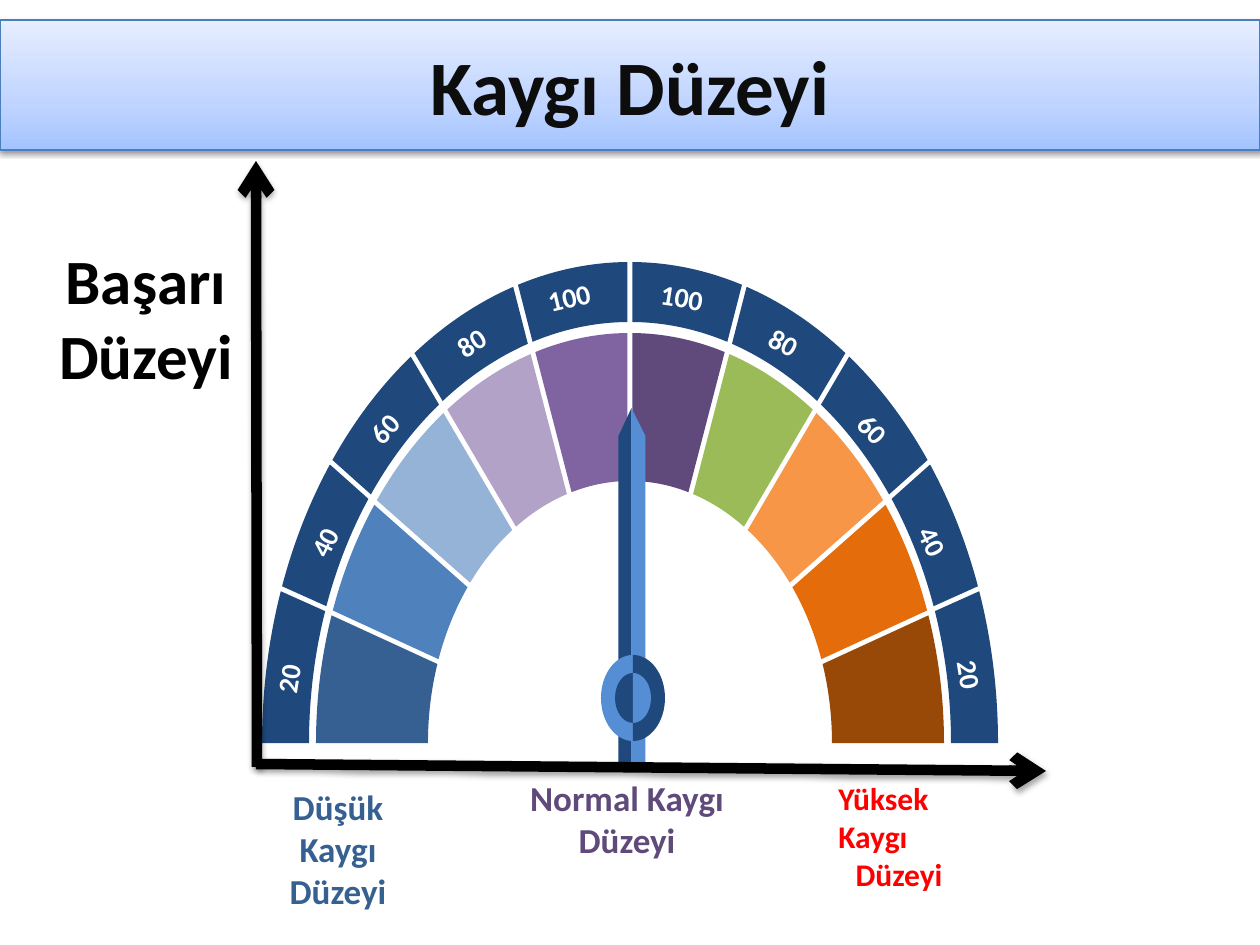
from copy import deepcopy
from itertools import chain
from math import cos, hypot, radians, sin, tan

from lxml import etree
from pptx import Presentation
from pptx.dml.color import RGBColor
from pptx.enum import shapes, text
from pptx.oxml import parse_xml
from pptx.oxml.ns import nsdecls, qn
from pptx.util import Pt

PX = 914400 / 126
FONT = "Calibri"

BLACK = RGBColor(0, 0, 0)
INK = RGBColor(0x0D, 0x0D, 0x0D)
WHITE = RGBColor(0xFF, 0xFF, 0xFF)
NAVY = RGBColor(0x1F, 0x49, 0x7D)
SKY = RGBColor(0x55, 0x8E, 0xD5)
STEEL = RGBColor(0x37, 0x60, 0x92)
PLUM = RGBColor(0x60, 0x4A, 0x7B)
RED = RGBColor(0xFF, 0, 0)
EDGE = RGBColor(0x4B, 0x7E, 0xBC)
BANNER_STOPS = [
    (0, RGBColor(0xA4, 0xC4, 0xFF)),
    (0.35, RGBColor(0xBF, 0xD4, 0xFF)),
    (1, RGBColor(0xE6, 0xEE, 0xFF)),
]
# Sectors from the right end of the dial to the left end
SECTOR_COLOURS = [
    RGBColor(0x98, 0x48, 0x07), RGBColor(0xE4, 0x6C, 0x0A),
    RGBColor(0xF7, 0x96, 0x46), RGBColor(0x9B, 0xBB, 0x59), PLUM,
    RGBColor(0x80, 0x64, 0xA2), RGBColor(0xB3, 0xA2, 0xC7),
    RGBColor(0x95, 0xB3, 0xD7), RGBColor(0x4F, 0x81, 0xBD), STEEL,
]

TITLE = "Kaygı Düzeyi"
# Text, centre x, centre y, rotation, from right to left
SCALE_LABELS = [
    ("20", 970, 675, 80.8), ("40", 933, 541, 63), ("60", 873, 429, 45.7),
    ("80", 784, 342, 28.5), ("100", 682, 297, 8.9), ("100", 569, 297, -13.4),
    ("80", 471, 342, -32.6), ("60", 384, 428, -47.9), ("40", 324, 542, -63.7),
    ("20", 288, 679, -80.9),
]
LEFT, CENTER = text.PP_ALIGN.LEFT, text.PP_ALIGN.CENTER
# Paragraphs with alignment, box, size, colour, wrap
CAPTIONS = [
    ([("Başarı", CENTER), ("Düzeyi", CENTER)], (45, 235, 202, 165), 36, BLACK, False),
    ([("Düşük Kaygı Düzeyi", CENTER)], (244, 779, 188, 140), 20, STEEL, True),
    ([("Normal Kaygı Düzeyi", CENTER)], (511, 770, 232, 97), 20, PLUM, True),
    ([("Yüksek Kaygı", LEFT), ("Düzeyi", CENTER)], (826, 773, 146, 127), 18, RED, True),
]
AXES = [(256, 764, 1046, 771), (257, 767, 256, 161)]

DIAL_CENTRE = (630, 743)
HALF_GAP = 2.5
# Outer and inner edge of each ring: radii, then cuts within a quarter turn
SCALE_RING = [((368, 481), (18.7, 35.7, 53.8, 71.9)),
              ((321, 421), (18.6, 35.8, 53.9, 71.9))]
SECTOR_RING = [((314, 410), (18.5, 35.9, 54, 72)),
               ((202, 262), (18.1, 37.1, 55, 72.5))]

POINTER_X, POINTER_TOP, POINTER_SHOULDER, POINTER_BOTTOM = 631.5, 408, 436, 766
POINTER_SIDES = [(14, SKY), (-13, NAVY)]
HUB_CENTRE = (633, 698)
# Radii, left colour, right colour
HUB_DISCS = [((32, 43), SKY, NAVY), ((18, 25), NAVY, SKY)]


def emu(*lengths):
    return [round(length * PX) for length in lengths]


def arc(centre, radii, start, end):
    """Four Bezier points of an elliptical arc; radians counted from the right."""
    (cx, cy), (rx, ry) = centre, radii
    k = 4 / 3 * tan((end - start) / 4)
    units = [(cos(start), sin(start)),
             (cos(start) - k * sin(start), sin(start) + k * cos(start)),
             (cos(end) + k * sin(end), sin(end) - k * cos(end)),
             (cos(end), sin(end))]
    return [(cx + rx * x, cy - ry * y) for x, y in units]


def add_outline(parent, start, steps, colour):
    """Closed outline; a step of one point is a line, of three points a curve."""
    builder = parent.shapes.build_freeform(*emu(*start))
    builder.add_line_segments([emu(*point) for point in chain(*steps)], close=True)
    shape = builder.convert_to_shape()
    lines = iter(list(shape._element.iter(qn("a:lnTo"))))
    for step in steps:
        used = [next(lines) for _ in step]
        if len(step) == 3:
            curve = etree.Element(qn("a:cubicBezTo"))
            used[0].addprevious(curve)
            for line in used:
                curve.append(line[0])
                line.getparent().remove(line)
    shape.shadow.inherit = False
    shape.fill.solid()
    shape.fill.fore_color.rgb = colour
    shape.line.fill.background()


def add_segment(parent, ring, index, colour):
    """Ring part between two cuts, leaving a gap of even width beside each cut."""
    def edge(radii, cuts):
        rx, ry = radii
        bounds = [0, *cuts, 90, *(180 - cut for cut in reversed(cuts)), 180]

        def inset(degrees):
            a = radians(degrees)
            gap = 0 if degrees in (0, 180) else HALF_GAP
            return gap * hypot(rx * cos(a), ry * sin(a)) / (rx * ry)

        start, end = bounds[index:index + 2]
        return arc(DIAL_CENTRE, radii,
                   radians(start) + inset(start), radians(end) - inset(end))

    outer, inner = (edge(*side) for side in ring)
    inner.reverse()
    add_outline(parent, outer[0], [outer[1:], inner[:1], inner[1:]], colour)


def write(frame, paragraphs, size, colour):
    for i, (words, align) in enumerate(paragraphs):
        para = frame.paragraphs[0] if i == 0 else frame.add_paragraph()
        para.alignment = align
        span = para.add_run()
        span.text = words
        span.font.name, span.font.size, span.font.bold = FONT, Pt(size), True
        span.font.color.rgb = colour


def add_text(parent, paragraphs, place, size, colour, wrap=False, rotation=0):
    box = parent.shapes.add_textbox(*emu(*place))
    box.rotation = rotation
    box.text_frame.word_wrap = wrap
    box.text_frame.auto_size = text.MSO_AUTO_SIZE.SHAPE_TO_FIT_TEXT
    write(box.text_frame, paragraphs, size, colour)


def add_shadow(shape, alpha, distance):
    shape._element.spPr.append(parse_xml(
        f'<a:effectLst {nsdecls("a")}><a:outerShdw blurRad="40000" dist="{distance}" '
        f'dir="5400000" rotWithShape="0"><a:srgbClr val="000000">'
        f'<a:alpha val="{alpha}"/></a:srgbClr></a:outerShdw></a:effectLst>'))


def format_title(title):
    title.left, title.top, title.width, title.height = emu(0, 20, 1260, 130)
    title.fill.gradient()
    title.fill.gradient_angle = 90
    stops = title._element.spPr.find(qn("a:gradFill")).find(qn("a:gsLst"))
    stops.insert(1, deepcopy(stops[0]))
    for stop, (position, colour) in zip(title.fill.gradient_stops, BANNER_STOPS):
        stop.color.rgb = colour
        stop.position = position
    title.line.color.rgb = EDGE
    title.line.width = Pt(0.75)
    add_shadow(title, 38000, 20000)
    title.text_frame.vertical_anchor = text.MSO_ANCHOR.MIDDLE
    write(title.text_frame, [(TITLE, CENTER)], 44, INK)


def add_axis(page, ends):
    axis = page.shapes.add_connector(shapes.MSO_CONNECTOR.STRAIGHT, *emu(*ends))
    axis.line.color.rgb = BLACK
    axis.line.width = Pt(6)
    etree.SubElement(axis.line._get_or_add_ln(), qn("a:tailEnd"), type="arrow")
    add_shadow(axis, 35000, 23000)


def add_pointer(page):
    pointer = page.shapes.add_group_shape()
    for reach, colour in POINTER_SIDES:
        side = POINTER_X + reach
        corners = [(side, POINTER_SHOULDER), (side, POINTER_BOTTOM),
                   (POINTER_X, POINTER_BOTTOM)]
        add_outline(pointer, (POINTER_X, POINTER_TOP),
                    [[corner] for corner in corners], colour)
    for radii, left, right in HUB_DISCS:
        for start, colour in ((90, left), (-90, right)):
            first, second = (arc(HUB_CENTRE, radii, radians(a), radians(a + 90))
                             for a in (start, start + 90))
            add_outline(pointer, first[0], [first[1:], second[1:]], colour)


def main():
    deck = Presentation()
    deck.slide_width, deck.slide_height = emu(1260, 945)
    page = deck.slides.add_slide(deck.slide_layouts[5])
    format_title(page.shapes.title)
    for index, colour in enumerate(SECTOR_COLOURS):
        add_segment(page, SECTOR_RING, index, colour)
    add_pointer(page)
    for index, (words, x, y, rotation) in enumerate(SCALE_LABELS):
        mark = page.shapes.add_group_shape()
        add_segment(mark, SCALE_RING, index, NAVY)
        width = 68 if len(words) == 3 else 54
        place = (x - width / 2, y - 23, width, 46)
        add_text(mark, [(words, CENTER)], place, 16, WHITE, rotation=rotation)
    for caption in CAPTIONS:
        add_text(page, *caption)
    for ends in AXES:
        add_axis(page, ends)
    deck.save("out.pptx")


if __name__ == "__main__":
    main()
